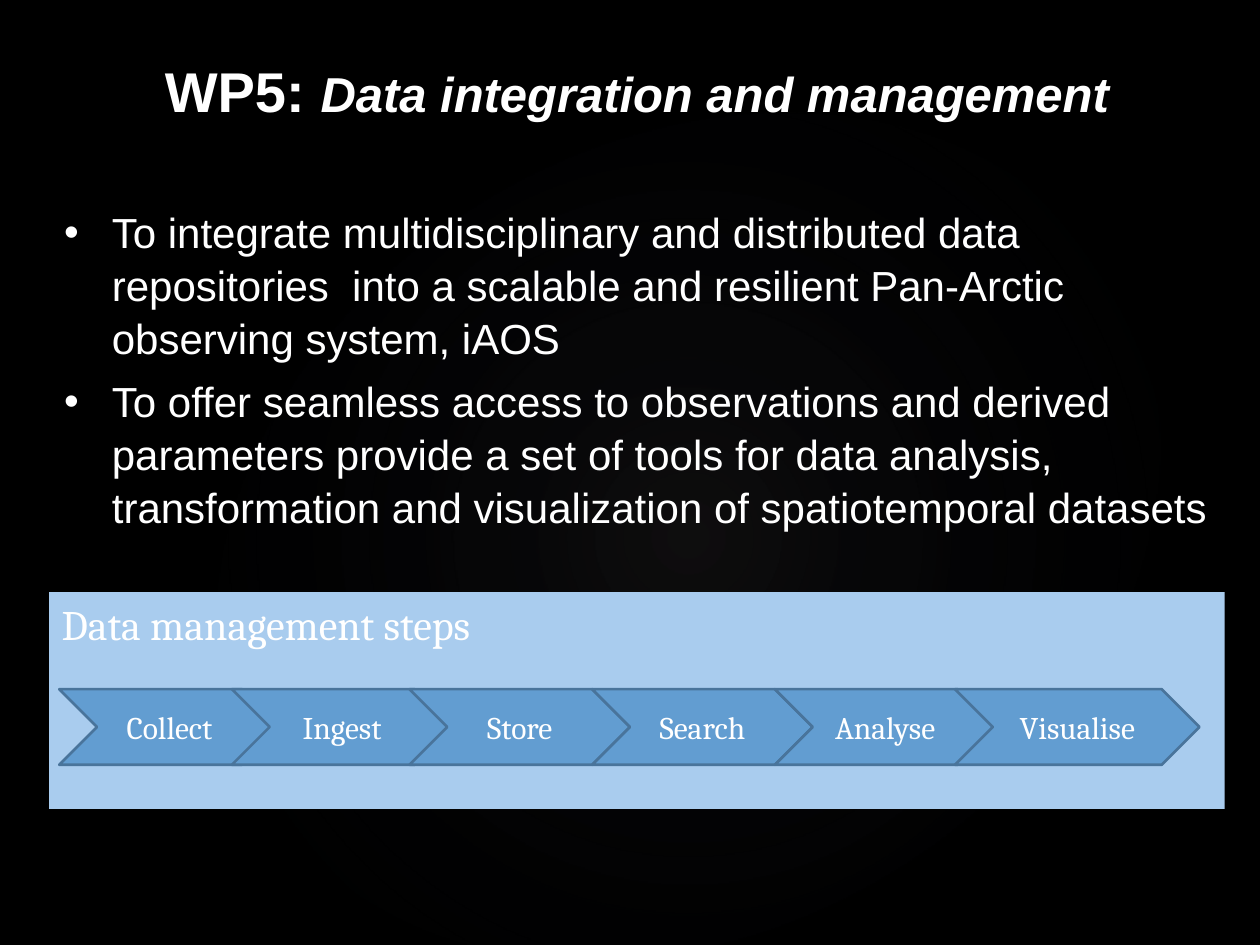
from lxml import etree
from pptx import Presentation
from pptx.dml.color import RGBColor
from pptx.enum.shapes import MSO_SHAPE
from pptx.enum.text import MSO_ANCHOR, PP_ALIGN
from pptx.oxml import parse_xml
from pptx.oxml.ns import nsdecls, qn
from pptx.util import Inches, Pt

TITLE = [("WP5: ", 32, False), ("Data integration and management", 28, True)]
GOALS = [
    "To integrate multidisciplinary and distributed data repositories  into a scalable "
    "and resilient Pan-Arctic observing system, iAOS",
    "To offer seamless access to observations and derived parameters provide a set of tools "
    "for data analysis, transformation and visualization of spatiotemporal datasets",
]
PANEL_TITLE = "Data management steps"
# step name, left edge, width in inches
STEPS = [
    ("Collect", 0.47, 1.75),
    ("Ingest", 1.84, 1.75),
    ("Store", 3.25, 1.75),
    ("Search", 4.7, 1.75),
    ("Analyse", 6.15, 1.75),
    ("Visualise", 7.58, 1.94),
]
STEP_TOP, STEP_HEIGHT = 5.47, 0.6
MARGIN, CONTENT_WIDTH = 0.39, 9.33
BLACK, WHITE = "000000", "FFFFFF"
PANEL_BLUE, STEP_BLUE, STEP_EDGE = "A9CCEE", "629DD1", "49749B"


def color(hex_value):
    return RGBColor.from_string(hex_value)


def add_run(paragraph, text, size, font="Arial", bold=False, italic=False):
    run = paragraph.add_run()
    run.text = text
    run.font.name = font
    run.font.size = Pt(size)
    run.font.bold = bold
    run.font.italic = italic
    run.font.color.rgb = color(WHITE)


def add_filled_shape(slide, kind, left, top, width, height, fill=None, edge=None):
    shape = slide.shapes.add_shape(kind, *map(Inches, (left, top, width, height)))
    shape.shadow.inherit = False
    if fill:
        shape.fill.solid()
        shape.fill.fore_color.rgb = color(fill)
    if edge:
        shape.line.color.rgb = color(edge)
        shape.line.width = Pt(1.5)
    else:
        shape.line.fill.background()
    return shape


def add_glow(slide):
    """Faint radial light behind the content."""
    glow = add_filled_shape(slide, MSO_SHAPE.OVAL, 1.5, 1.14, 7.92, 6.24)
    glow.rotation = 328.7
    gradient = parse_xml(
        f'<a:gradFill {nsdecls("a")} rotWithShape="1"><a:gsLst>'
        '<a:gs pos="0"><a:srgbClr val="C4BCC6"><a:alpha val="7000"/></a:srgbClr></a:gs>'
        '<a:gs pos="58000"><a:srgbClr val="242852"><a:alpha val="0"/></a:srgbClr></a:gs>'
        '</a:gsLst><a:path path="circle">'
        '<a:fillToRect l="50000" t="50000" r="50000" b="50000"/></a:path></a:gradFill>'
    )
    glow._element.spPr.find(qn("a:prstGeom")).addnext(gradient)


def add_bullet(paragraph):
    properties = paragraph._p.get_or_add_pPr()
    properties.set("marL", str(Inches(0.4)))
    properties.set("indent", str(Inches(-0.38)))
    etree.SubElement(properties, qn("a:buFont")).set("typeface", "Arial")
    etree.SubElement(properties, qn("a:buChar")).set("char", "•")


def add_goals(slide):
    box = slide.shapes.add_textbox(*map(Inches, (MARGIN, 0.37, CONTENT_WIDTH, 3.79)))
    frame = box.text_frame
    frame.word_wrap = True
    title = frame.paragraphs[0]
    title.alignment = PP_ALIGN.CENTER
    title.line_spacing = 1.05
    for text, size, italic in TITLE:
        add_run(title, text, size, bold=True, italic=italic)
    for index, goal in enumerate(GOALS):
        paragraph = frame.add_paragraph()
        add_bullet(paragraph)
        paragraph.line_spacing = 1.05
        paragraph.space_before = Pt(6 if index else 46)
        add_run(paragraph, goal, 24)


def add_panel(slide):
    panel = add_filled_shape(slide, MSO_SHAPE.RECTANGLE, MARGIN, 4.7, CONTENT_WIDTH, 1.72, PANEL_BLUE)
    panel.text_frame.vertical_anchor = MSO_ANCHOR.TOP
    heading = panel.text_frame.paragraphs[0]
    heading.alignment = PP_ALIGN.LEFT
    add_run(heading, PANEL_TITLE, 24, "Cambria")


def add_steps(slide):
    for name, left, width in STEPS:
        step = add_filled_shape(slide, MSO_SHAPE.CHEVRON, left, STEP_TOP, width, STEP_HEIGHT,
                                STEP_BLUE, STEP_EDGE)
        step.text_frame.vertical_anchor = MSO_ANCHOR.MIDDLE
        label = step.text_frame.paragraphs[0]
        label.alignment = PP_ALIGN.CENTER
        add_run(label, name, 18, "Cambria")


def main():
    presentation = Presentation()
    presentation.slide_width, presentation.slide_height = Inches(10), Inches(7.5)
    slide = presentation.slides.add_slide(presentation.slide_layouts[6])
    slide.background.fill.solid()
    slide.background.fill.fore_color.rgb = color(BLACK)
    add_glow(slide)
    add_panel(slide)
    add_goals(slide)
    add_steps(slide)
    presentation.save("out.pptx")


if __name__ == "__main__":
    main()
